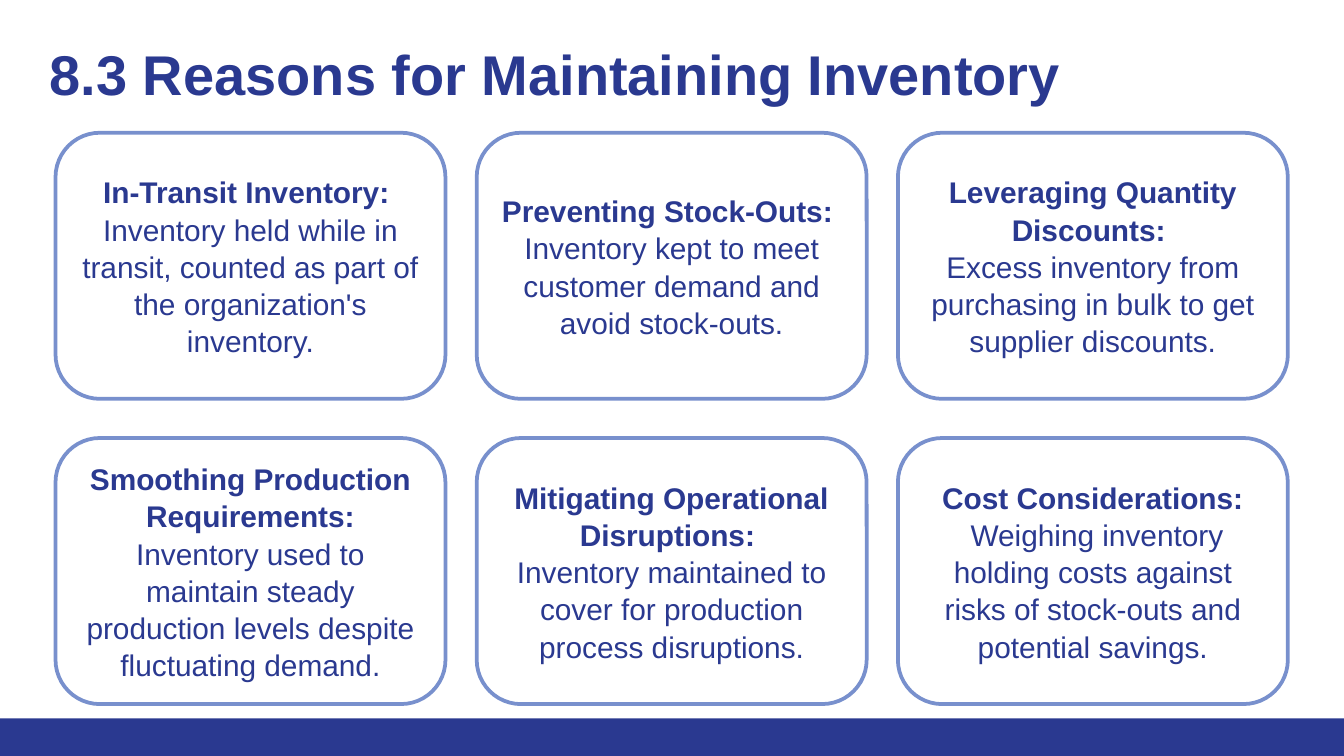
from pptx import Presentation
from pptx.dml.color import RGBColor
from pptx.enum.shapes import MSO_SHAPE as Shape
from pptx.enum.text import MSO_ANCHOR as Anchor, PP_ALIGN as Align
from pptx.util import Cm, Pt

NAVY = "2A3990"
PERIWINKLE = "7890CD"
WHITE = "FFFFFF"
FONT = "Arial"

REASONS = [
    ("In-Transit Inventory: ",
     ["Inventory held while in transit, counted as part of the organization's inventory."]),
    ("Preventing Stock-Outs: ",
     ["Inventory kept to meet customer demand and avoid stock-outs."]),
    ("Leveraging Quantity Discounts: ",
     ["Excess inventory from purchasing in bulk to get supplier discounts."]),
    ("Smoothing Production Requirements:",
     ["Inventory used to maintain steady production levels despite fluctuating demand."]),
    ("Mitigating Operational Disruptions: ",
     ["Inventory maintained to cover for production process disruptions."]),
    ("Cost Considerations:",
     [" ", "Weighing inventory holding costs against risks of stock-outs and potential savings."]),
]


def color(hex_value):
    return RGBColor.from_string(hex_value)


def add_run(paragraph, text, size, bold):
    run = paragraph.add_run()
    run.text = text
    run.font.name = FONT
    run.font.size = Pt(size)
    run.font.bold = bold
    run.font.color.rgb = color(NAVY)


def add_panel(slide, kind, box, fill, line=None):
    shape = slide.shapes.add_shape(kind, *map(Cm, box))
    shape.shadow.inherit = False
    shape.fill.solid()
    shape.fill.fore_color.rgb = color(fill)
    if line:
        shape.line.color.rgb = color(line)
        shape.line.width = Pt(2)
    else:
        shape.line.fill.background()
    return shape


def add_title(slide, box, text):
    frame = slide.shapes.add_textbox(*map(Cm, box)).text_frame
    frame.word_wrap = True
    frame.margin_left = frame.margin_right = Cm(0.25)
    frame.margin_top = frame.margin_bottom = Cm(0.25)
    add_run(frame.paragraphs[0], text, 30, True)


def add_card(slide, box, heading, body):
    frame = add_panel(slide, Shape.ROUNDED_RECTANGLE, box, WHITE, PERIWINKLE).text_frame
    frame.word_wrap = True
    frame.vertical_anchor = Anchor.MIDDLE
    frame.margin_left = frame.margin_right = Cm(0.23)
    paragraphs = [frame.paragraphs[0], frame.add_paragraph()]
    for paragraph in paragraphs:
        paragraph.alignment = Align.CENTER
        paragraph.line_spacing = 1.04
    add_run(paragraphs[0], heading, 16, True)
    for text in body:
        add_run(paragraphs[1], text, 16, text.isspace())


def add_card_grid(slide, box, reasons, columns=3, column_gap=0.59, row_gap=0.74):
    left, top, width, height = box
    rows = len(reasons) // columns
    card_width = (width - (columns - 1) * column_gap) / columns
    card_height = (height - (rows - 1) * row_gap) / rows
    for index, (heading, body) in enumerate(reasons):
        row, column = divmod(index, columns)
        card_box = (left + column * (card_width + column_gap),
                    top + row * (card_height + row_gap), card_width, card_height)
        add_card(slide, card_box, heading, body)


def main():
    presentation = Presentation()
    presentation.slide_width = Cm(25.4)
    presentation.slide_height = Cm(14.29)
    slide = presentation.slides.add_slide(presentation.slide_layouts[6])
    slide.background.fill.solid()
    slide.background.fill.fore_color.rgb = color(WHITE)
    add_panel(slide, Shape.RECTANGLE, (0, 13.58, 25.4, 0.71), NAVY)
    add_title(slide, (0.69, 0.5, 24.08, 2.26), "8.3 Reasons for Maintaining Inventory")
    add_card_grid(slide, (1.05, 2.51, 23.29, 10.8), REASONS)
    presentation.save("out.pptx")


if __name__ == "__main__":
    main()
